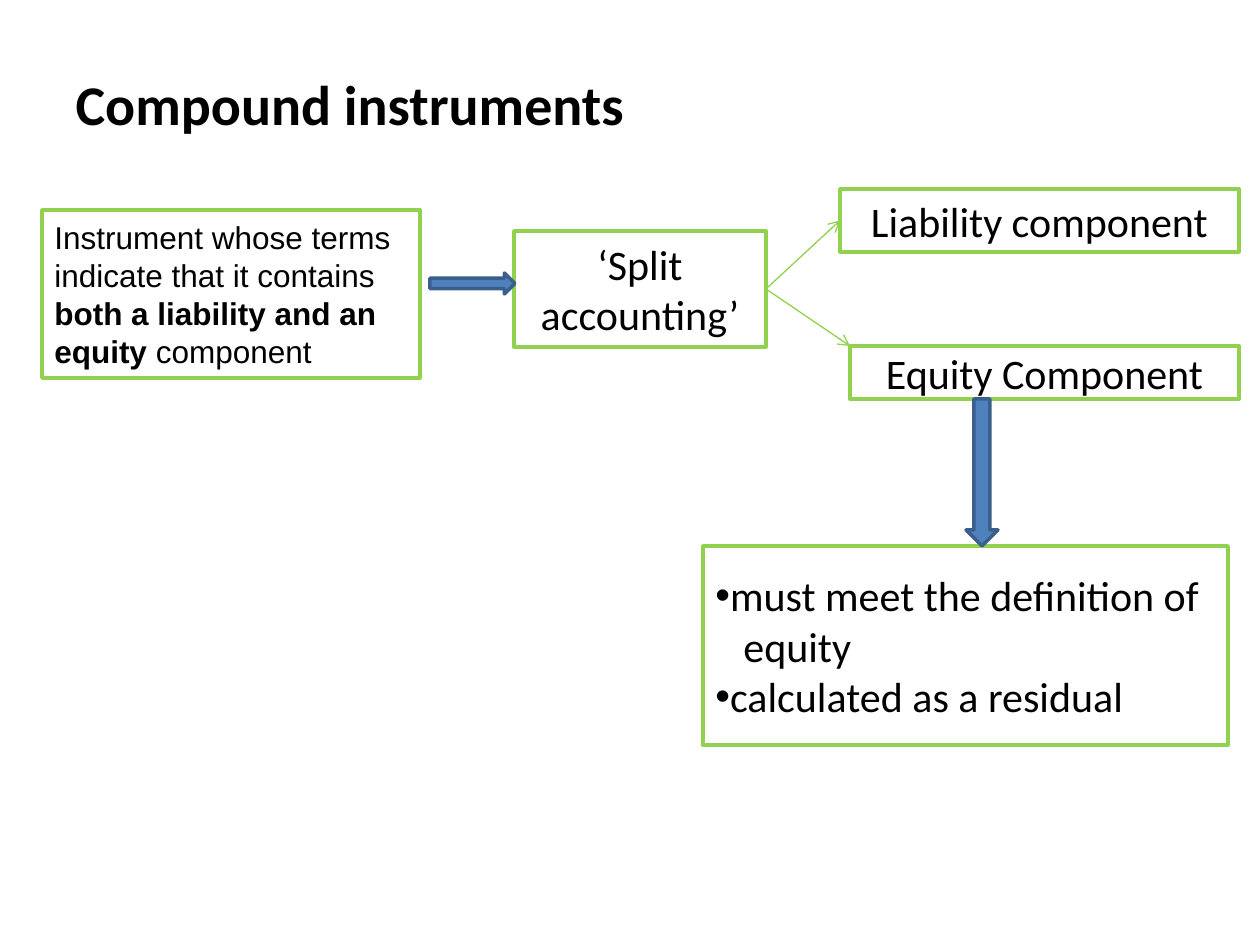
from pptx import Presentation
from pptx import util as u
from pptx.dml.color import RGBColor
from pptx.enum import shapes, text
from pptx.oxml.ns import qn
from lxml import etree

COLOURS = {"ink": "000000", "paper": "FFFFFF", "green": "92D050",
           "blue": "4F81BD", "navy": "3A5F8C"}
PX = 914400 / 126


def px(*lengths):
    return [u.Emu(round(length * PX)) for length in lengths]


def colour(name):
    return RGBColor.from_string(COLOURS[name])


class Sheet:
    def __init__(self, page):
        self.page = page

    def style(self, para, size, font="Calibri", align=text.PP_ALIGN.LEFT):
        para.alignment = align
        para.font.size = u.Pt(size)
        para.font.name = font
        para.font.color.rgb = colour("ink")

    def title(self, words, frame):
        box = self.page.shapes.title
        box.left, box.top, box.width, box.height = px(*frame)
        box.text_frame.vertical_anchor = text.MSO_ANCHOR.TOP
        para = box.text_frame.paragraphs[0]
        para.text = words
        self.style(para, 32)
        para.font.bold = True

    def shape(self, kind, frame, fill, line):
        box = self.page.shapes.add_shape(kind, *px(*frame))
        box.shadow.inherit = False
        box.fill.solid()
        box.fill.fore_color.rgb = colour(fill)
        box.line.color.rgb = colour(line)
        box.line.width = u.Pt(2)
        return box

    def box(self, frame, words=""):
        box = self.shape(shapes.MSO_SHAPE.RECTANGLE, frame, "paper", "green")
        box.text_frame.word_wrap = True
        box.text_frame.vertical_anchor = text.MSO_ANCHOR.MIDDLE
        if words:
            para = box.text_frame.paragraphs[0]
            para.text = words
            self.style(para, 24, align=text.PP_ALIGN.CENTER)
        return box

    def definition(self, frame, spans):
        para = self.box(frame).text_frame.paragraphs[0]
        self.style(para, 18, "Arial")
        for words, bold in spans:
            span = para.add_run()
            span.text = words
            span.font.bold = bold

    def criteria(self, frame, lines):
        body = self.box(frame).text_frame
        body.text = "\n".join(words for words, _ in lines)
        for para, (_, bulleted) in zip(body.paragraphs, lines):
            self.style(para, 24)
            props = para._p.get_or_add_pPr()
            props.set("marL", str(0 if bulleted else px(28)[0]))
            props.set("indent", "0")
            if bulleted:
                bullet = etree.Element(qn("a:buChar"), char="•")
                face = etree.Element(qn("a:buFont"), typeface="Arial")
                props.insert(0, bullet)
                props.insert(0, face)

    def block_arrow(self, kind, frame):
        self.shape(kind, frame, "blue", "navy")

    def arrow(self, source, end, target=None):
        line = self.page.shapes.add_connector(
            shapes.MSO_CONNECTOR.STRAIGHT, 0, 0, *px(*end))
        line.begin_connect(source, 3)
        if target is not None:
            line.end_connect(target, 1)
        line.line.color.rgb = colour("green")
        line.line.width = u.Pt(0.75)
        etree.SubElement(line.line._get_or_add_ln(), qn("a:tailEnd"), type="arrow")
        etree.SubElement(line._element.spPr, qn("a:effectLst"))


def main():
    deck = Presentation()
    deck.slide_width, deck.slide_height = px(1260, 945)
    sheet = Sheet(deck.slides.add_slide(deck.slide_layouts[5]))

    sheet.title("Compound instruments", (63, 63, 1134, 84))
    sheet.definition((42, 210, 378, 168), [
        ("Instrument whose terms indicate that it contains ", False),
        ("both a liability and an equity ", True),
        ("component", False)])
    split = sheet.box((514, 231, 252, 116), "‘Split accounting’")
    liability = sheet.box((840, 189, 399, 63), "Liability component")
    sheet.box((850, 346, 389, 53), "Equity Component")
    sheet.criteria((703, 546, 525, 199), [
        ("must meet the definition of", True),
        ("equity", False),
        ("calculated as a residual", True)])

    sheet.block_arrow(shapes.MSO_SHAPE.RIGHT_ARROW, (430, 273, 85, 21))
    sheet.arrow(split, (850, 346))
    sheet.arrow(split, (840, 220), liability)
    sheet.block_arrow(shapes.MSO_SHAPE.DOWN_ARROW, (966, 399, 32, 147))
    deck.save("out.pptx")


if __name__ == "__main__":
    main()
